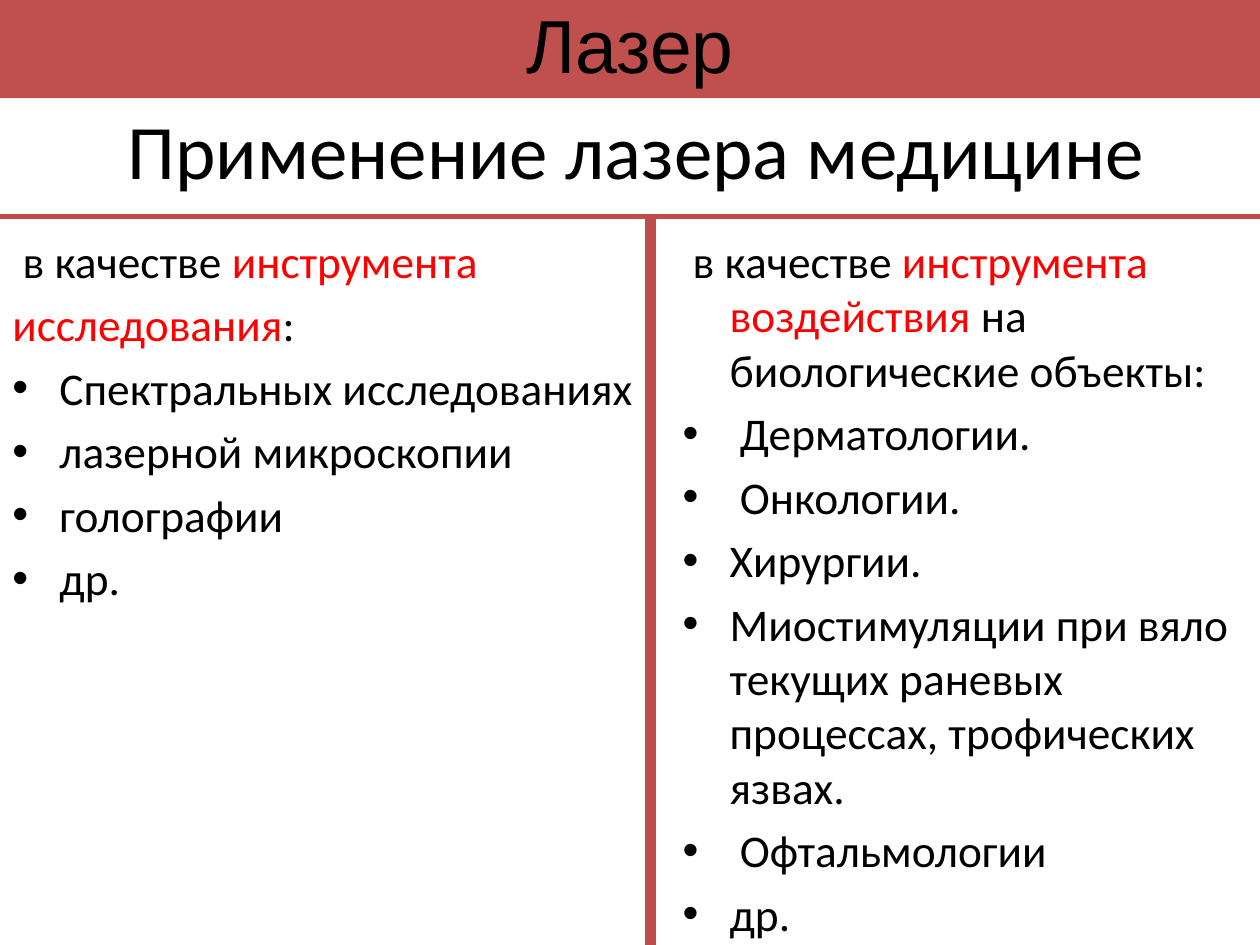
from lxml import etree
from pptx import Presentation
from pptx import util as u
from pptx.dml.color import RGBColor
from pptx.enum import shapes, text
from pptx.oxml.ns import qn

WIDE, HIGH = 25.4, 19.05
RULE = 4.37
BLACK, RED, BRICK, EDGE = "000000", "FF0000", "C0504D", "BF4C48"

LEFT = [
    (False, [(" в качестве ", BLACK), ("инструмента", RED)]),
    (False, [("исследования", RED), (":", BLACK)]),
    (True, [("Спектральных исследованиях", BLACK)]),
    (True, [("лазерной микроскопии", BLACK)]),
    (True, [("голографии", BLACK)]),
    (True, [("др.", BLACK)]),
]
RIGHT = [
    (False, [(" в качестве ", BLACK), ("инструмента воздействия ", RED),
             ("на биологические объекты:", BLACK)]),
    (True, [(" Дерматологии.", BLACK)]),
    (True, [(" Онкологии.", BLACK)]),
    (True, [("Хирургии.", BLACK)]),
    (True, [("Миостимуляции при вяло текущих раневых процессах, "
             "трофических язвах.", BLACK)]),
    (True, [(" Офтальмологии", BLACK)]),
    (True, [("др.", BLACK)]),
]


def color(code):
    return RGBColor.from_string(code)


def style(run, size, face, code):
    run.font.size = u.Pt(size)
    run.font.name = face
    run.font.color.rgb = color(code)


def place(shape, box):
    shape.left, shape.top, shape.width, shape.height = map(u.Cm, box)


def label(shape, words, size, face):
    frame = shape.text_frame
    frame.text = words
    frame.word_wrap = True
    frame.vertical_anchor = text.MSO_ANCHOR.MIDDLE
    para = frame.paragraphs[0]
    para.alignment = text.PP_ALIGN.CENTER
    style(para.runs[0], size, face, BLACK)
    return para


def heading(slide, box):
    title = slide.shapes.title
    place(title, box)
    label(title, "Применение лазера медицине", 44, "Calibri")


def banner(slide, box):
    bar = slide.shapes.add_shape(shapes.MSO_SHAPE.RECTANGLE, *map(u.Cm, box))
    bar.shadow.inherit = False
    bar.fill.solid()
    bar.fill.fore_color.rgb = color(BRICK)
    bar.line.fill.background()
    label(bar, "Лазер", 42.9, "Arial").line_spacing = 0.9


def indent(para, dotted):
    props = para._p.get_or_add_pPr()
    props.set("marL", str(u.Cm(0.95)))
    props.set("indent", str(-u.Cm(0.95)))
    if dotted:
        etree.SubElement(props, qn("a:buFont")).set("typeface", "Arial")
        etree.SubElement(props, qn("a:buChar")).set("char", "•")
    else:
        etree.SubElement(props, qn("a:buNone"))


def column(slide, box, items):
    frame = slide.shapes.add_textbox(*map(u.Cm, box)).text_frame
    frame.word_wrap = True
    for i, (dotted, parts) in enumerate(items):
        para = frame.add_paragraph() if i else frame.paragraphs[0]
        para.space_before = u.Pt(5.2)
        indent(para, dotted)
        for words, code in parts:
            run = para.add_run()
            run.text = words
            style(run, 25.9, "Calibri", code)


def rule(slide, start, end, width):
    line = slide.shapes.add_connector(
        shapes.MSO_CONNECTOR.STRAIGHT, *map(u.Cm, start + end))
    line.line.color.rgb = color(EDGE)
    line.line.width = u.Pt(width)
    etree.SubElement(line._element.spPr, qn("a:effectLst"))


def main():
    deck = Presentation()
    deck.slide_width, deck.slide_height = u.Cm(WIDE), u.Cm(HIGH)
    slide = deck.slides.add_slide(deck.slide_layouts[5])
    heading(slide, (1.4, 1.4, 22.86, 3.18))
    column(slide, (0, 4.57, 13.89, 12.01), LEFT)
    column(slide, (13.51, 4.57, 11.89, 12.62), RIGHT)
    banner(slide, (0, 0, WIDE, 1.98))
    rule(slide, (13.11, RULE), (13.11, HIGH), 6)
    rule(slide, (0, RULE), (WIDE, RULE), 3)
    deck.save("out.pptx")


if __name__ == "__main__":
    main()
